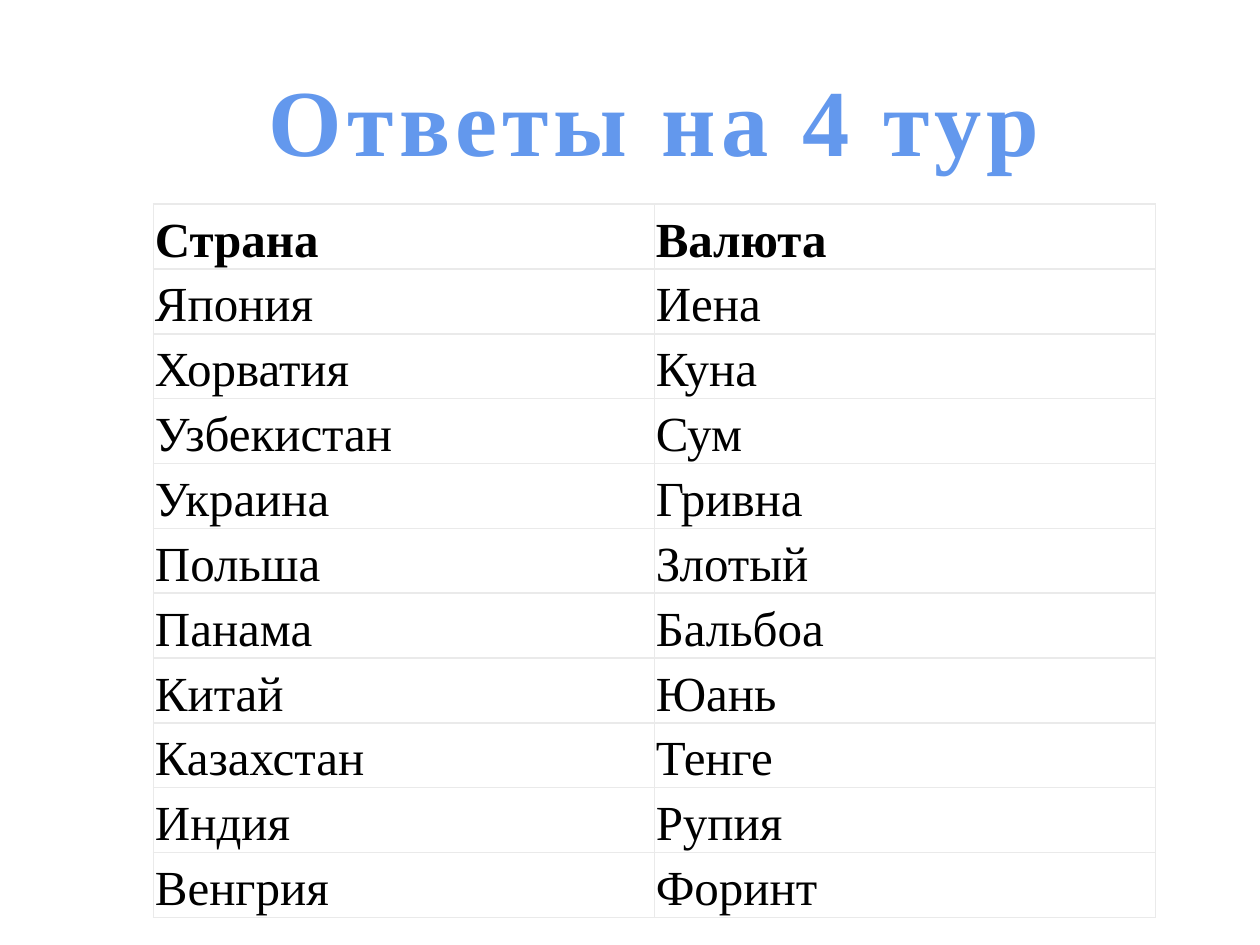
from dataclasses import dataclass

from lxml.etree import fromstring
from pptx import Presentation
from pptx.dml.color import RGBColor
from pptx.enum.text import MSO_ANCHOR, PP_ALIGN
from pptx.oxml.ns import nsdecls
from pptx.util import Inches, Pt


@dataclass(frozen=True)
class Theme:
    font: str = "Times New Roman"
    title_size: int = 54
    body_size: int = 28
    title_top: str = "6398ED"
    title_bottom: str = "265EA0"
    title_outline: str = "F4F6F9"
    title_shadow: str = "9CC8FF"
    text: str = "000000"
    cell: str = "FFFFFF"
    border: str = "EAEAEA"


THEME = Theme()

ANSWERS = [
    ("Страна", "Валюта"),
    ("Япония", "Иена"),
    ("Хорватия", "Куна"),
    ("Узбекистан", "Сум"),
    ("Украина", "Гривна"),
    ("Польша", "Злотый"),
    ("Панама", "Бальбоа"),
    ("Китай", "Юань"),
    ("Казахстан", "Тенге"),
    ("Индия", "Рупия"),
    ("Венгрия", "Форинт"),
]


def drawing_xml(markup):
    """Parse one DrawingML element, adding the namespace to its first tag."""
    tag, rest = markup.split(">", 1)
    return fromstring(f"{tag} {nsdecls('a')}>{rest}")


def solid(color):
    return f'<a:solidFill><a:srgbClr val="{color}"/></a:solidFill>'


def add_title(page, text, box):
    title = page.shapes.title
    title.left, title.top, title.width, title.height = map(Inches, box)
    frame = title.text_frame
    frame.vertical_anchor = MSO_ANCHOR.TOP
    frame.word_wrap = True
    para = frame.paragraphs[0]
    para.alignment = PP_ALIGN.CENTER
    span = para.add_run()
    span.text = text
    span.font.name = THEME.font
    span.font.size = Pt(THEME.title_size)
    span.font.bold = True

    # Letter spacing, outline, gradient and soft shadow
    properties = span.font._element
    properties.set("spc", "300")
    effects = [
        f'<a:ln w="11430">{solid(THEME.title_outline)}</a:ln>',
        f'<a:gradFill><a:gsLst>'
        f'<a:gs pos="10000"><a:srgbClr val="{THEME.title_top}"/></a:gs>'
        f'<a:gs pos="75000"><a:srgbClr val="{THEME.title_bottom}"/></a:gs>'
        f'</a:gsLst><a:lin ang="5400000"/></a:gradFill>',
        f'<a:effectLst><a:outerShdw blurRad="25400" dist="38100" dir="2700000">'
        f'<a:srgbClr val="{THEME.title_shadow}"/></a:outerShdw></a:effectLst>',
    ]
    for position, markup in enumerate(effects):
        properties.insert(position, drawing_xml(markup))


def format_cell(cell, text, bold):
    cell.margin_left = cell.margin_right = Inches(0.01)
    cell.margin_top = cell.margin_bottom = Inches(0.01)
    cell.text = text
    para = cell.text_frame.paragraphs[0]
    para.line_spacing = 1.15
    para.space_after = Pt(10)
    para.font.name = THEME.font
    para.font.size = Pt(THEME.body_size)
    para.font.bold = bold
    para.font.color.rgb = RGBColor.from_string(THEME.text)

    # Borders come before the fill in the cell properties
    cell.fill.solid()
    cell.fill.fore_color.rgb = RGBColor.from_string(THEME.cell)
    properties = cell._tc.get_or_add_tcPr()
    for position, side in enumerate(("lnL", "lnR", "lnT", "lnB")):
        line = drawing_xml(f'<a:{side} w="12700">{solid(THEME.border)}</a:{side}>')
        properties.insert(position, line)


def add_answers_table(page, rows, box):
    left, top, width, height = map(Inches, box)
    table = page.shapes.add_table(
        len(rows), len(rows[0]), left, top, width, height).table
    table.horz_banding = False
    table.first_row = False
    for row_index, row in enumerate(rows):
        for column_index, text in enumerate(row):
            format_cell(table.cell(row_index, column_index), text, row_index == 0)


def main():
    deck = Presentation()
    deck.slide_width, deck.slide_height = Inches(10), Inches(7.5)
    page = deck.slides.add_slide(deck.slide_layouts[5])
    add_title(page, "Ответы на 4 тур", (1.69, 0.44, 7.01, 1.01))
    add_answers_table(page, ANSWERS, (1.22, 1.62, 7.95, 5.61))
    deck.save("out.pptx")


if __name__ == "__main__":
    main()
